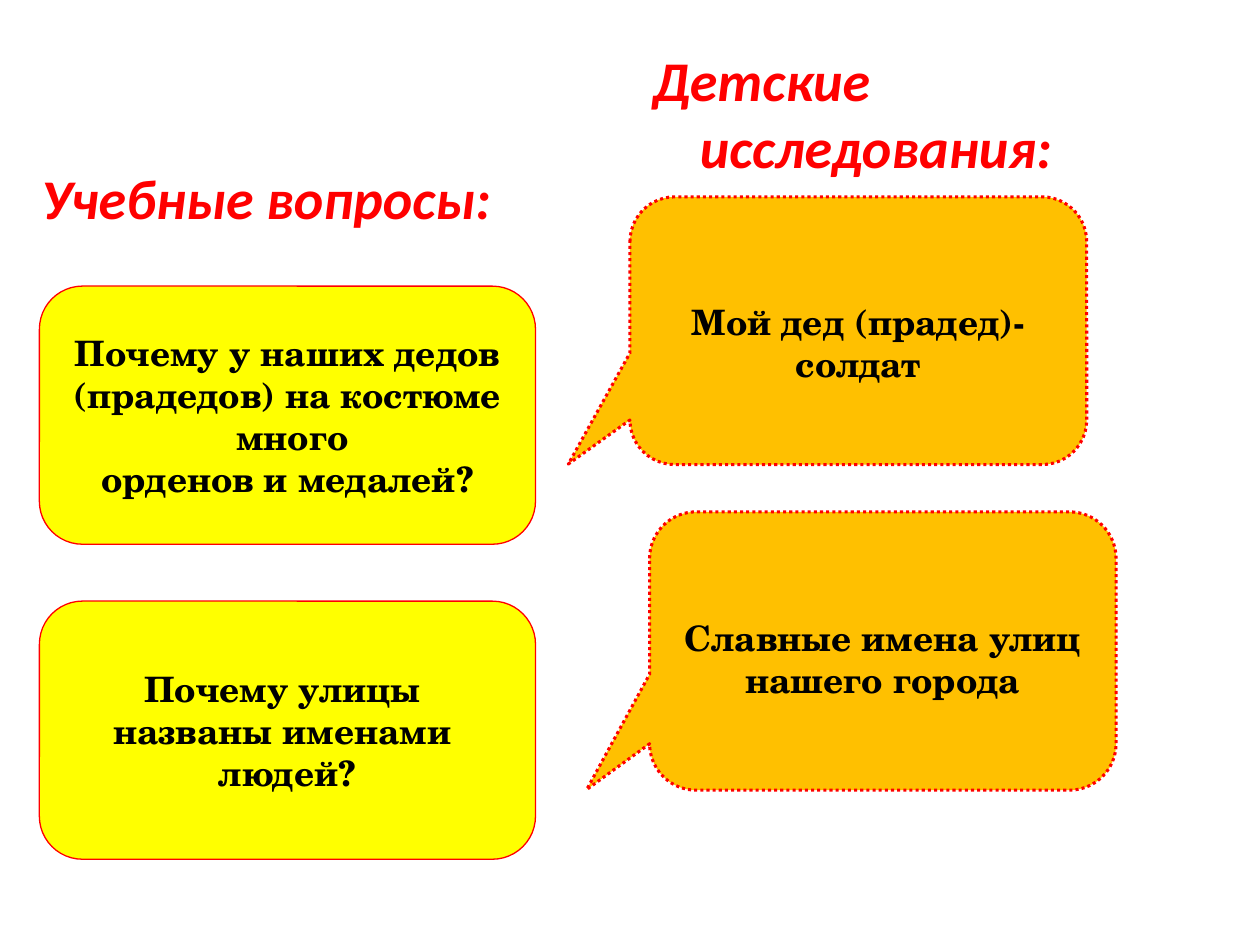
from pptx import Presentation
from pptx.dml.color import RGBColor
from pptx.enum.dml import MSO_LINE
from pptx.enum.shapes import MSO_SHAPE as Shape
from pptx.enum.text import MSO_ANCHOR as Anchor, MSO_AUTO_SIZE as AutoSize, PP_ALIGN as Align
from pptx.oxml.ns import qn
from pptx.util import Pt
from lxml.etree import SubElement

RED = RGBColor(0xFF, 0x00, 0x00)
YELLOW = RGBColor(0xFF, 0xFF, 0x00)
AMBER = RGBColor(0xFF, 0xC0, 0x00)
BLACK = RGBColor(0x00, 0x00, 0x00)

HEADING_FONT = "Calibri"
CARD_FONT = "TeX Gyre Schola"
CORNER = 0.167


def style_font(font, name, size, color):
    font.name = name
    font.size = Pt(size)
    font.bold = True
    font.color.rgb = color


def place(box, left, top, width, height):
    box.left, box.top, box.width, box.height = map(Pt, (left, top, width, height))


def fill_heading(placeholder, text, bounds):
    """Column heading with a hanging indent and no bullet."""
    place(placeholder, *bounds)
    frame = placeholder.text_frame
    frame.text = text
    frame.word_wrap = True
    frame.auto_size = AutoSize.NONE
    frame.vertical_anchor = Anchor.TOP
    para = frame.paragraphs[0]
    para.space_before = Pt(0)
    properties = para._p.get_or_add_pPr()
    properties.set("marL", str(Pt(27)))
    properties.set("indent", str(Pt(-27)))
    SubElement(properties, qn("a:buNone"))
    font = para.runs[0].font
    style_font(font, HEADING_FONT, 32, RED)
    font.italic = True


def add_card(slide, kind, bounds, lines, fill, line_width):
    """Rounded shape with centred bold lines."""
    card = slide.shapes.add_shape(kind, *map(Pt, bounds))
    card.shadow.inherit = False
    card.fill.solid()
    card.fill.fore_color.rgb = fill
    card.line.color.rgb = RED
    card.line.width = Pt(line_width)
    frame = card.text_frame
    frame.text = "\n".join(lines)
    for para in frame.paragraphs:
        para.alignment = Align.CENTER
        for run in para.runs:
            style_font(run.font, CARD_FONT, 20, BLACK)
    return card


def add_question(slide, top, lines):
    bounds = (22.5, top, 283.5, 147.5)
    card = add_card(slide, Shape.ROUNDED_RECTANGLE, bounds, lines, YELLOW, 0.75)
    card.adjustments[0] = CORNER
    card.text_frame.word_wrap = False
    card.text_frame.vertical_anchor = Anchor.MIDDLE


def add_research(slide, bounds, lines):
    card = add_card(slide, Shape.ROUNDED_RECTANGULAR_CALLOUT, bounds, lines, AMBER, 1.75)
    card.line.dash_style = MSO_LINE.ROUND_DOT
    for index, value in enumerate((-0.635, 0.498, CORNER)):
        card.adjustments[index] = value
    frame = card.text_frame
    frame.word_wrap = True
    frame.vertical_anchor = Anchor.TOP
    frame.margin_top = Pt(52)


def main():
    deck = Presentation()
    deck.slide_width, deck.slide_height = Pt(720), Pt(540)
    slide = deck.slides.add_slide(deck.slide_layouts.get_by_name("Two Content"))

    # Column headings; the slide has no overall title
    title, left_body, right_body = list(slide.placeholders)[:3]
    title._element.getparent().remove(title._element)
    fill_heading(left_body, "Учебные вопросы:", (16.5, 90, 318, 50))
    fill_heading(right_body, "Детские исследования:", (365.75, 22.5, 318, 90))

    # Study questions
    add_question(slide, 163.5, ["Почему у наших дедов", "(прадедов) на костюме",
                                " много", "орденов и медалей?"])
    add_question(slide, 343.5, ["Почему улицы ", "названы именами ", "людей?"])

    # Children's research topics
    add_research(slide, (360, 112.5, 261, 153), ["Мой дед (прадед)- солдат"])
    add_research(slide, (371.25, 292.5, 266.5, 159),
                 ["Славные имена улиц", "нашего города"])

    deck.save("out.pptx")


if __name__ == "__main__":
    main()
